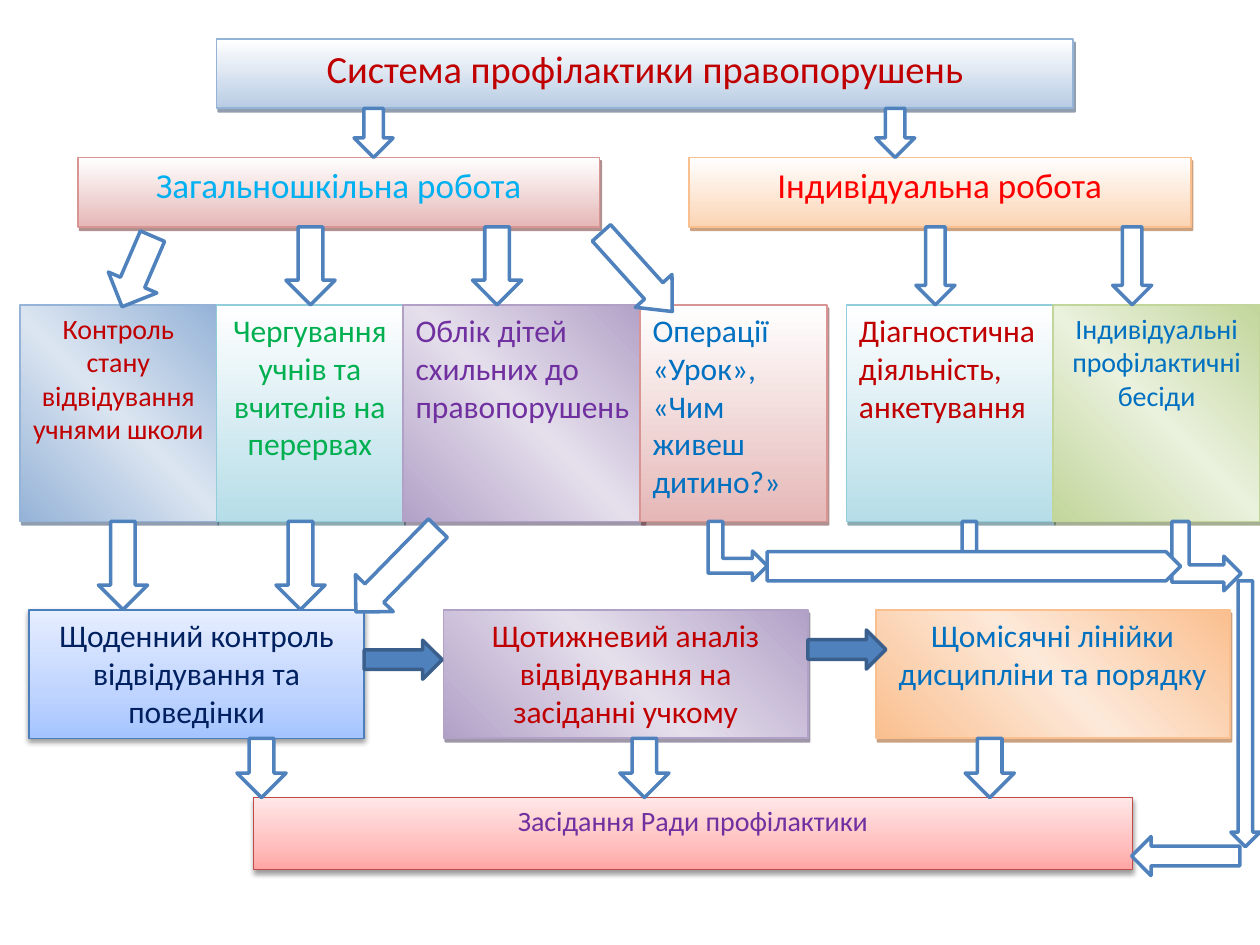
from lxml.etree import SubElement
from pptx import Presentation
from pptx.dml.color import RGBColor
from pptx.enum.shapes import MSO_SHAPE as Shape
from pptx.enum.text import MSO_ANCHOR as Anchor, PP_ALIGN as Align
from pptx.oxml.ns import qn
from pptx.util import Pt

COLORS = {
    "white": "FFFFFF", "arrow": "4F81BD", "arrow_edge": "3A5F8C",
    "crimson": "C00000", "red": "FF0000", "sky": "00B0F0", "green": "00B050",
    "purple": "7030A0", "blue": "0070C0", "navy": "002060",
}
SOFT, GLOW, BRIGHT = "soft", "glow", "bright"
STYLES = {
    SOFT: {"positions": (0, 100), "angle": 90, "line": 1, "shadow": (50, 0, 2.2, 63)},
    GLOW: {"positions": (0, 50, 100), "angle": 315, "line": 1, "shadow": (50, 0, 2.2, 63)},
    BRIGHT: {"positions": (0, 35, 100), "angle": 270, "line": 0.75, "shadow": (38, 3.1, 1.6, 90)},
}
THEMES = {
    "soft_blue": (SOFT, ("FFFFFF", "B8CCE4"), "95B3D7", "243F60"),
    "soft_red": (SOFT, ("FFFFFF", "E5B8B7"), "D99594", "622423"),
    "soft_orange": (SOFT, ("FFFFFF", "FBD4B4"), "FABF8F", "974706"),
    "soft_aqua": (SOFT, ("FFFFFF", "B6DDE8"), "92CDDC", "205867"),
    "glow_blue": (GLOW, ("95B3D7", "DBE5F1", "95B3D7"), "95B3D7", "243F60"),
    "glow_purple": (GLOW, ("B2A1C7", "E5DFEC", "B2A1C7"), "B2A1C7", "3F3151"),
    "glow_green": (GLOW, ("C2D69B", "EAF1DD", "C2D69B"), "C2D69B", "4E6128"),
    "glow_orange": (GLOW, ("FABF8F", "FDE9D9", "FABF8F"), "FABF8F", "974706"),
    "bright_blue": (BRIGHT, ("A4C4FF", "BFD4FF", "E6EEFF"), "4B7EBC", "000000"),
    "bright_red": (BRIGHT, ("FFA6A5", "FFC0BF", "FFE7E7"), "BF4C48", "000000"),
}

HEADING = [(0, 489.6, "soft_blue", "Система профілактики правопорушень", 22, "crimson", Align.CENTER)]
BRANCHES = [
    (0, 298, "soft_red", "Загальношкільна робота", 20, "sky", Align.CENTER),
    (349.2, 286.6, "soft_orange", "Індивідуальна робота", 20, "red", Align.CENTER),
]
ACTIVITIES = [
    (0, 112.3, "glow_blue", "Контроль стану відвідування учнями школи", 16, "crimson", Align.CENTER),
    (112.3, 106.6, "soft_aqua", "Чергування учнів та вчителів на перервах", 18, "green", Align.CENTER),
    (218.9, 137.5, "glow_purple", "Облік дітей схильних до правопорушень", 18, "purple", Align.LEFT),
    (354.3, 106.6, "soft_red", "Операції «Урок», «Чим живеш дитино?»", 18, "blue", Align.LEFT),
    (472.3, 118.1, "soft_aqua", "Діагностична діяльність, анкетування", 18, "crimson", Align.LEFT),
    (590.4, 118.1, "glow_green", "Індивідуальні профілактичні бесіди", 16, "blue", Align.CENTER),
]
CONTROLS = [
    (0, 191.5, "bright_blue", "Щоденний контроль відвідування та поведінки", 18, "navy", Align.CENTER),
    (236.9, 208.1, "glow_purple", "Щотижневий аналіз відвідування на засіданні учкому", 18, "crimson", Align.CENTER),
    (483.8, 202.3, "glow_orange", "Щомісячні лінійки дисципліни та порядку", 18, "blue", Align.CENTER),
]
COUNCIL = [(0, 502.6, "bright_red", "Засідання Ради профілактики", 16, "purple", Align.CENTER)]


def rgb(name):
    """Return the named colour."""
    return RGBColor.from_string(COLORS[name])


def add_shadow(shape, color, opacity, blur, distance, angle):
    """Give a shape an outer shadow."""
    effects = shape._element.spPr.find(qn("a:effectLst"))
    shadow = SubElement(effects, qn("a:outerShdw"), blurRad=str(Pt(blur)), dist=str(Pt(distance)),
                        dir=str(angle * 60000), algn="ctr", rotWithShape="0")
    tint = SubElement(shadow, qn("a:srgbClr"), val=color)
    SubElement(tint, qn("a:alpha"), val=str(opacity * 1000))


def fill_gradient(shape, colors, positions, angle):
    """Fill a shape with a linear gradient."""
    shape.fill.gradient()
    gradient = shape._element.spPr.find(qn("a:gradFill"))
    for child in list(gradient):
        gradient.remove(child)
    stops = SubElement(gradient, qn("a:gsLst"))
    for color, position in zip(colors, positions):
        stop = SubElement(stops, qn("a:gs"), pos=str(position * 1000))
        SubElement(stop, qn("a:srgbClr"), val=color)
    SubElement(gradient, qn("a:lin"), ang=str(angle * 60000), scaled="0")


def add_card(slide, box, theme, text, size, color, align):
    """Draw a shaded box with its text at the top."""
    style_name, colors, line_color, shadow_color = THEMES[theme]
    style = STYLES[style_name]
    card = slide.shapes.add_shape(Shape.RECTANGLE, *map(Pt, box))
    card.shadow.inherit = False
    fill_gradient(card, colors, style["positions"], style["angle"])
    card.line.color.rgb = RGBColor.from_string(line_color)
    card.line.width = Pt(style["line"])
    add_shadow(card, shadow_color, *style["shadow"])
    frame = card.text_frame
    frame.word_wrap = True
    frame.vertical_anchor = Anchor.TOP
    paragraph = frame.paragraphs[0]
    paragraph.text = text
    paragraph.alignment = align
    paragraph.space_after = Pt(10)
    paragraph.font.name = "Calibri"
    paragraph.font.size = Pt(size)
    paragraph.font.color.rgb = rgb(color)


def add_arrow(slide, kind, box, rotation=0, fill="white", line="arrow"):
    """Draw one block arrow."""
    arrow = slide.shapes.add_shape(kind, *map(Pt, box))
    arrow.shadow.inherit = False
    arrow.rotation = rotation
    arrow.fill.solid()
    arrow.fill.fore_color.rgb = rgb(fill)
    arrow.line.color.rgb = rgb(line)
    arrow.line.width = Pt(2)
    return arrow


def add_card_row(slide, box, cards):
    """Draw a row of cards as high as the box."""
    left, top, _, height = box
    for offset, width, *content in cards:
        add_card(slide, (left + offset, top, width, height), *content)


def add_down_arrows(slide, box, arrows):
    """Draw straight arrows that span the height of the box."""
    left, top, _, height = box
    for offset, width in arrows:
        add_arrow(slide, Shape.DOWN_ARROW, (left + offset, top, width, height))


def add_slanted_arrows(slide, box):
    """Draw the slanted arrows around the activity row."""
    left, top, _, _ = box
    add_arrow(slide, Shape.DOWN_ARROW, (left + 51.9, top - 41, 30.2, 43.9), 23.3)
    operations = add_arrow(slide, Shape.DOWN_ARROW, (left + 338.4, top - 48.9, 28.1, 60.5), 318)
    operations.adjustments[1] = 0.565
    add_arrow(slide, Shape.DOWN_ARROW, (left + 200.2, top + 118.1, 30.2, 67), 44.4)


def add_control_arrows(slide, box):
    """Draw the solid arrows between the control cards."""
    left, top, _, _ = box
    for offset, drop in ((191.5, 17.3), (445, 11.5)):
        add_arrow(slide, Shape.RIGHT_ARROW, (left + offset, top + drop, 44.6, 22.3),
                  fill="arrow", line="arrow_edge")


def add_bypass(slide, box):
    """Draw the route from the right-hand activities to the council."""
    left, top, _, _ = box
    for kind, (x, y, width, height), rotation in (
        (Shape.BENT_UP_ARROW, (0, 0, 33.8, 33.8), 90),
        (Shape.BENT_UP_ARROW, (265, 0, 39.6, 39.6), 90),
        (Shape.DOWN_ARROW, (141.1, 0, 16.6, 28.1), 0),
        (Shape.PENTAGON, (33.8, 17.3, 236.2, 16.6), 0),
        (Shape.DOWN_ARROW, (298.8, 33.9, 16.6, 151.9), 0),
        (Shape.LEFT_ARROW, (242, 180, 61.9, 22.3), 0),
    ):
        add_arrow(slide, kind, (left + x, top + y, width, height), rotation)


def main():
    """Build and save the slide."""
    presentation = Presentation()
    presentation.slide_width, presentation.slide_height = Pt(720), Pt(540)
    slide = presentation.slides.add_slide(presentation.slide_layouts[6])
    activity_box = (11.5, 174.2, 708.5, 123.8)
    control_box = (16.6, 348.5, 686.1, 73.4)
    for box, cards in (
        ((123.8, 22.3, 489.6, 39.6), HEADING),
        ((44.6, 90, 635.8, 39.6), BRANCHES),
        (activity_box, ACTIVITIES),
        (control_box, CONTROLS),
        ((144.7, 455.8, 502.6, 41), COUNCIL),
    ):
        add_card_row(slide, box, cards)
    for box, arrows in (
        ((0, 61.9, 720, 28.1), [(202.3, 22.3), (500.4, 22.3)]),
        ((0, 129.6, 720, 44.6), [(163.4, 28.1), (270, 28.1), (523.4, 22.3), (635.8, 22.3)]),
        ((0, 298, 720, 50.4), [(56.2, 28.1), (157.7, 28.1)]),
        ((0, 421.9, 720, 33.9), [(135.4, 28.1), (354.2, 28.1), (551.5, 28.1)]),
    ):
        add_down_arrows(slide, box, arrows)
    add_slanted_arrows(slide, activity_box)
    add_control_arrows(slide, control_box)
    add_bypass(slide, (404.6, 298, 315.4, 202.3))
    presentation.save("out.pptx")


if __name__ == "__main__":
    main()
